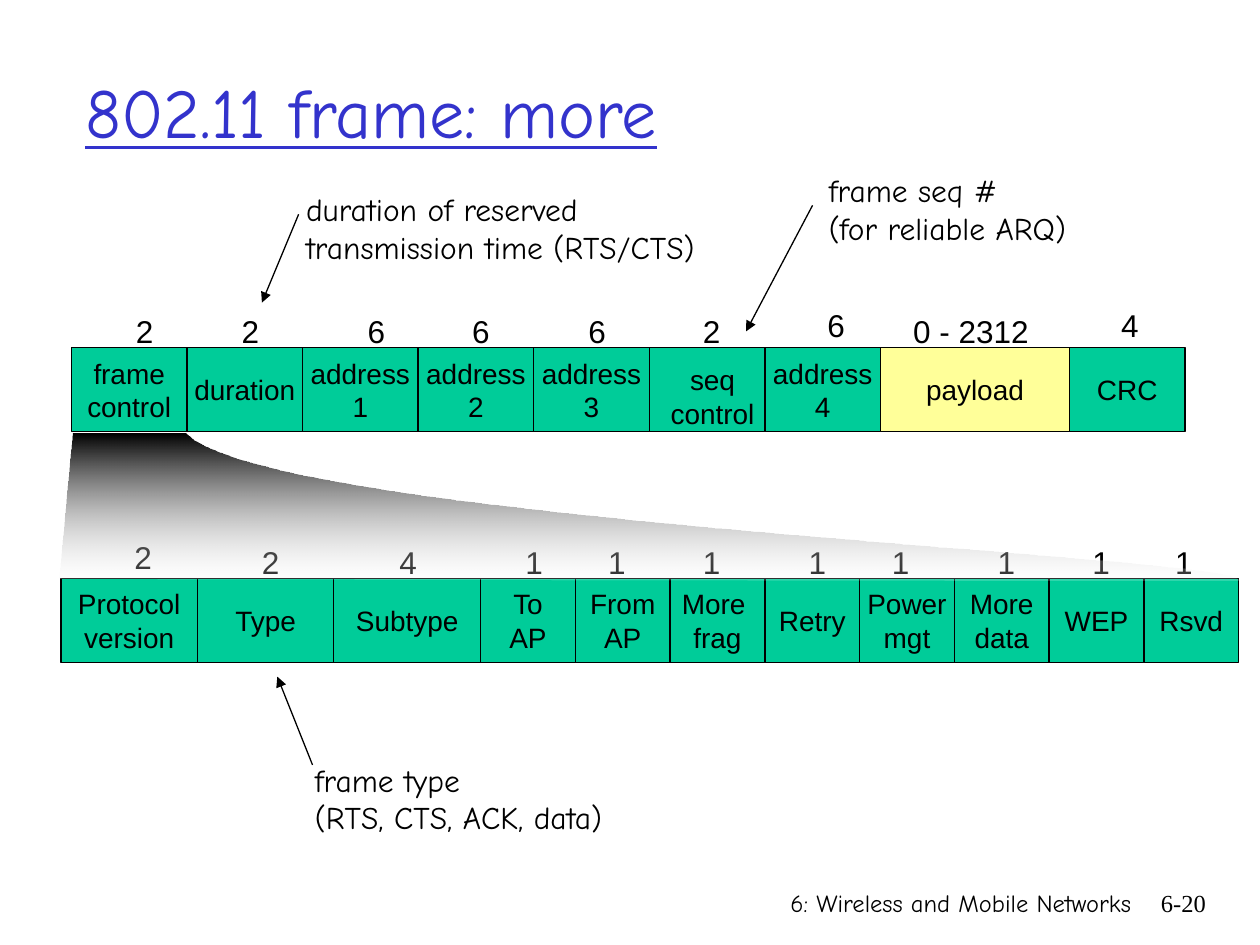
"""Build a slide on the fields of an 802.11 frame and of its frame control."""
import lxml.etree
import pptx
import pptx.dml.color
import pptx.enum.dml
import pptx.enum.shapes
import pptx.enum.text
import pptx.oxml.ns
import pptx.util

Cm = pptx.util.Cm
Align = pptx.enum.text.PP_ALIGN
Anchor = pptx.enum.text.MSO_ANCHOR
COLORS = {"ink": "000000", "title": "3333CC", "field": "00CC99",
          "payload": "FFFF99", "white": "FFFFFF"}
SANS, HAND, SERIF = "Arial", "Comic Neue", "Times New Roman"
ROW_HEIGHT = 1.69
FRAME_ROW = (1.44, 7.01)
CONTROL_ROW = (1.23, 11.66)

FRAME_FIELDS = [
    ("frame\ncontrol", 2.33), ("duration", 2.33), ("address\n1", 2.33),
    ("address\n2", 2.33), ("address\n3", 2.33), ("", 2.33),
    ("address\n4", 2.33), ("payload", 3.81), ("CRC", 2.33),
]
FRAME_BYTES = [
    ("2", 2.49, 6.17), ("2", 4.62, 6.17), ("6", 7.16, 6.17),
    ("6", 9.27, 6.17), ("6", 11.61, 6.17), ("2", 13.92, 6.17),
    ("6", 16.43, 6.05), ("0 - 2312", 18.16, 6.17), ("4", 22.35, 6.05),
]
CONTROL_FIELDS = [
    ("Protocol\nversion", 2.75), ("Type", 2.75), ("Subtype", 2.96),
    ("To\nAP", 1.91), ("From\nAP", 1.91), ("More \nfrag", 1.91),
    ("Retry", 1.91), ("Power\nmgt", 1.91), ("More\ndata", 1.91),
    ("WEP", 1.91), ("Rsvd", 1.91),
]
CONTROL_BITS = [
    ("2", 2.46, 10.72), ("2", 5.03, 10.82), ("4", 7.8, 10.82),
    ("1", 10.34, 10.82), ("1", 12.01, 10.82), ("1", 13.92, 10.82),
    ("1", 16.05, 10.82), ("1", 17.73, 10.82), ("1", 19.86, 10.82),
    ("1", 21.77, 10.82), ("1", 23.44, 10.82),
]
NOTES = [
    ("duration of reserved\ntransmission time (RTS/CTS)", 5.92, 3.71, 9.22),
    ("frame seq #\n(for reliable ARQ)", 16.46, 3.33, 5.97),
    ("frame type\n(RTS, CTS, ACK, data)", 6.1, 15.21, 7.16),
]
ARROWS = [
    (6.02, 4.32, 5.28, 6.1),
    (16.38, 4.14, 15.04, 6.68),
    (6.3, 15.42, 5.59, 13.64),
]


def rgb(name):
    """Return the named colour."""
    return pptx.dml.color.RGBColor.from_string(COLORS[name])


def write(shape, text, size, font, color="ink", align=Align.LEFT,
          anchor=Anchor.TOP, wrap=False):
    """Write one paragraph per line of text into a shape."""
    frame = shape.text_frame
    frame.text = text
    frame.word_wrap = wrap
    frame.vertical_anchor = anchor
    for para in frame.paragraphs:
        para.alignment = align
        para.font.size = pptx.util.Pt(size)
        para.font.name = font
        para.font.color.rgb = rgb(color)


def add_text(page, text, left, top, width, height, size, font, **style):
    """Add a text box and return it."""
    box = page.shapes.add_textbox(Cm(left), Cm(top), Cm(width), Cm(height))
    write(box, text, size, font, **style)
    return box


def add_row(page, origin, fields):
    """Add a row of adjoining field boxes."""
    left, top = origin
    for name, width in fields:
        box = page.shapes.add_shape(
            pptx.enum.shapes.MSO_SHAPE.RECTANGLE,
            Cm(left), Cm(top), Cm(width), Cm(ROW_HEIGHT))
        box.shadow.inherit = False
        box.fill.solid()
        box.fill.fore_color.rgb = rgb("payload" if name == "payload" else "field")
        box.line.color.rgb = rgb("ink")
        box.line.width = pptx.util.Pt(0.75)
        if name:
            write(box, name, 16, SANS, align=Align.CENTER, anchor=Anchor.MIDDLE)
        left += width


def add_sizes(page, sizes):
    """Add the field lengths above a row."""
    for text, left, top in sizes:
        width = 0.86 if len(text) == 1 else 2.84
        add_text(page, text, left, top, width, 1.02, 18, SANS)


def bezier(start, first, second, end, steps=40):
    """Return points along a cubic curve, without its start."""
    points = []
    for step in range(1, steps + 1):
        t = step / steps
        weights = ((1 - t) ** 3, 3 * t * (1 - t) ** 2, 3 * t * t * (1 - t), t ** 3)
        points.append(tuple(
            sum(weight * value for weight, value in zip(weights, axis))
            for axis in zip(start, first, second, end)))
    return points


def add_zoom(page):
    """Add the fading wedge from the frame control field to its own fields."""
    outline = [(1.2, 11.66), (24.97, 11.71)]
    outline += bezier(outline[-1], (25.4, 11.2), (5.49, 10.54), (3.76, 8.74))
    builder = page.shapes.build_freeform(Cm(1.47), Cm(8.74))
    builder.add_line_segments([(Cm(x), Cm(y)) for x, y in outline], close=True)
    wedge = builder.convert_to_shape()
    wedge.shadow.inherit = False
    wedge.line.fill.background()
    wedge.fill.gradient()
    wedge.fill.gradient_angle = 270
    for stop, position, name in zip(wedge.fill.gradient_stops, (0, 1), ("ink", "white")):
        stop.position = position
        stop.color.rgb = rgb(name)
    qn = pptx.oxml.ns.qn
    clear = wedge.fill.gradient_stops[1].color
    for color in wedge.element.spPr.iter(qn("a:srgbClr")):
        if color.get("val") == str(clear.rgb):
            lxml.etree.SubElement(color, qn("a:alpha"), val="18000")


def add_arrow(page, x1, y1, x2, y2):
    """Add a thin line with an arrowhead at its end."""
    arrow = page.shapes.add_connector(
        pptx.enum.shapes.MSO_CONNECTOR.STRAIGHT, Cm(x1), Cm(y1), Cm(x2), Cm(y2))
    arrow.line.color.rgb = rgb("ink")
    arrow.line.width = pptx.util.Pt(0.75)
    qn = pptx.oxml.ns.qn
    lxml.etree.SubElement(arrow.line._get_or_add_ln(), qn("a:tailEnd"), type="triangle")
    lxml.etree.SubElement(arrow.element.spPr, qn("a:effectLst"))


def main():
    """Build and save the deck."""
    deck = pptx.Presentation()
    deck.slide_width, deck.slide_height = Cm(25.4), Cm(19.05)
    page = deck.slides.add_slide(deck.slide_layouts[6])
    add_text(page, "6: Wireless and Mobile Networks", 12.34, 17.78, 10.72, 1.27,
             14, HAND, align=Align.RIGHT, wrap=True)
    add_text(page, "6-20", 22.68, 17.78, 1.88, 1.27, 14, SERIF,
             align=Align.RIGHT, wrap=True)
    add_row(page, FRAME_ROW, FRAME_FIELDS)
    add_sizes(page, FRAME_BYTES)
    add_text(page, "seq\ncontrol", 13.26, 7.19, 2.21, 1.63, 16, SANS,
             align=Align.CENTER)
    add_row(page, CONTROL_ROW, CONTROL_FIELDS)
    add_sizes(page, CONTROL_BITS)
    add_zoom(page)
    title = add_text(page, "802.11 frame: more", 1.47, 0.64, 21.59, 3.18, 40, HAND,
                     color="title", anchor=Anchor.MIDDLE, wrap=True)
    title.text_frame.paragraphs[0].font.underline = True
    for text, left, top, width in NOTES:
        add_text(page, text, left, top, width, 1.78, 18, HAND)
    for ends in ARROWS:
        add_arrow(page, *ends)
    deck.save("out.pptx")


if __name__ == "__main__":
    main()
